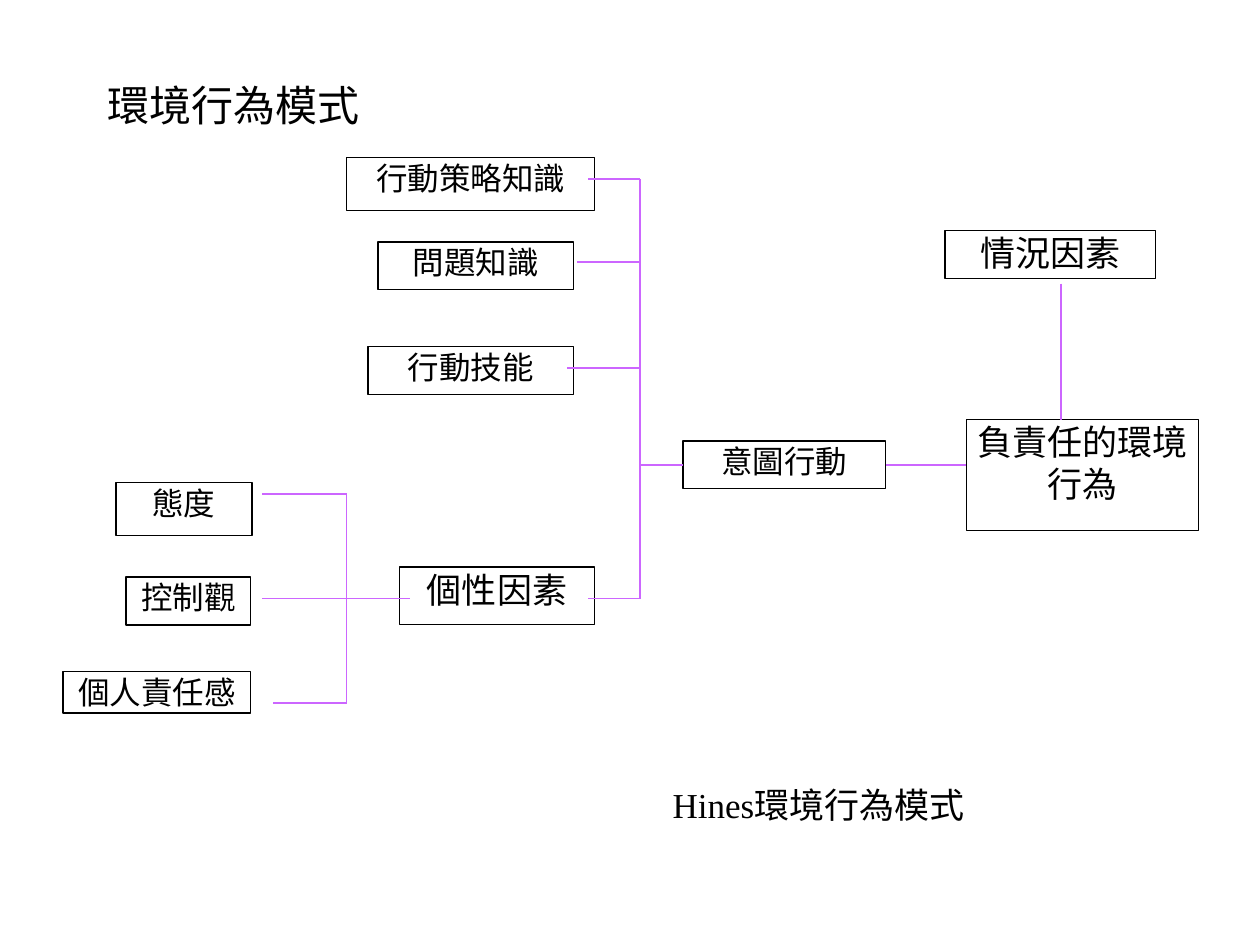
"""Build a slide showing the Hines model of environmental behaviour."""
from lxml.etree import SubElement
from pptx import Presentation
from pptx.dml.color import RGBColor
from pptx.enum.shapes import MSO_CONNECTOR as CONN, MSO_SHAPE as SHAPE
from pptx.enum.text import MSO_ANCHOR as ANCHOR, MSO_AUTO_SIZE as AUTO, PP_ALIGN as ALIGN
from pptx.oxml.ns import qn
from pptx.util import Inches, Pt

BLACK = RGBColor(0x00, 0x00, 0x00)
WHITE = RGBColor(0xFF, 0xFF, 0xFF)
VIOLET = RGBColor(0xCC, 0x66, 0xFF)
LEFT, RIGHT = 1, 3


class Diagram:
    font = "Times New Roman"
    line_width = Pt(0.75)

    def __init__(self, slide):
        self.s = slide

    def set_text(self, sp, text, size, align):
        tf = sp.text_frame
        tf.word_wrap = True
        tf.vertical_anchor = ANCHOR.TOP
        p = tf.paragraphs[0]
        p.text = text
        p.alignment = align
        p.font.name = self.font
        p.font.size = Pt(size)
        p.font.color.rgb = BLACK
        return tf

    def title(self, text, x, y, w, h, size):
        sp = self.s.shapes.title
        sp.left, sp.top, sp.width, sp.height = map(Inches, (x, y, w, h))
        tf = self.set_text(sp, text, size, ALIGN.LEFT)
        tf.auto_size = AUTO.NONE

    def caption(self, text, x, y, w, h, size):
        sp = self.s.shapes.add_textbox(*map(Inches, (x, y, w, h)))
        self.set_text(sp, text, size, ALIGN.LEFT)

    def box(self, text, x, y, w, h, size=18):
        sp = self.s.shapes.add_shape(SHAPE.RECTANGLE, *map(Inches, (x, y, w, h)))
        sp.shadow.inherit = False
        sp.fill.solid()
        sp.fill.fore_color.rgb = WHITE
        sp.line.color.rgb = BLACK
        sp.line.width = self.line_width
        tf = self.set_text(sp, text, size, ALIGN.CENTER)
        tf.margin_left = tf.margin_right = Inches(0.04)
        tf.margin_top = tf.margin_bottom = Inches(0.01)
        return sp

    def line(self, x1, y1, x2, y2):
        c = self.s.shapes.add_connector(CONN.STRAIGHT, *map(Inches, (x1, y1, x2, y2)))
        c.line.color.rgb = VIOLET
        c.line.width = self.line_width
        SubElement(c._element.spPr, qn("a:effectLst"))
        return c


def main():
    prs = Presentation()
    prs.slide_width, prs.slide_height = Inches(10), Inches(7.5)
    d = Diagram(prs.slides.add_slide(prs.slide_layouts[5]))
    d.title("環境行為模式", 0.75, 0.58, 5.83, 0.5, 24)

    d.box("態度", 0.92, 3.83, 1.08, 0.42)
    d.box("控制觀", 1, 4.58, 0.99, 0.38)
    d.box("個人責任感", 0.5, 5.33, 1.49, 0.33)
    d.box("個性因素", 3.17, 4.5, 1.55, 0.46, 20)
    d.box("問題知識", 3, 1.92, 1.55, 0.38)
    d.box("行動策略知識", 2.75, 1.25, 1.97, 0.42)
    d.box("行動技能", 2.92, 2.75, 1.63, 0.38)
    intention = d.box("意圖行動", 5.42, 3.5, 1.61, 0.38)
    d.box("負責任的環境行為", 7.67, 3.33, 1.84, 0.88, 20)
    d.box("情況因素", 7.5, 1.83, 1.67, 0.38, 20)

    trait_x, factor_x, mid_y = 2.75, 5.08, 3.69
    d.line(trait_x, 3.92, trait_x, 5.58)
    for x1, x2, y in ((2.08, trait_x, 3.92), (2.08, 3.25, 4.75), (2.17, trait_x, 5.58)):
        d.line(x1, y, x2, y)

    d.line(factor_x, 1.42, factor_x, 4.75)
    for x, y in ((4.67, 4.75), (4.67, 1.42), (4.58, 2.08), (4.5, 2.92)):
        d.line(x, y, factor_x, y)

    d.line(factor_x, mid_y, 5.42, mid_y).end_connect(intention, LEFT)
    d.line(7.03, mid_y, 7.67, mid_y).begin_connect(intention, RIGHT)
    d.line(8.42, 2.25, 8.42, 3.33)

    d.caption(" Hines環境行為模式", 5.17, 6.17, 2.83, 0.43, 20)
    prs.save("out.pptx")


if __name__ == "__main__":
    main()
